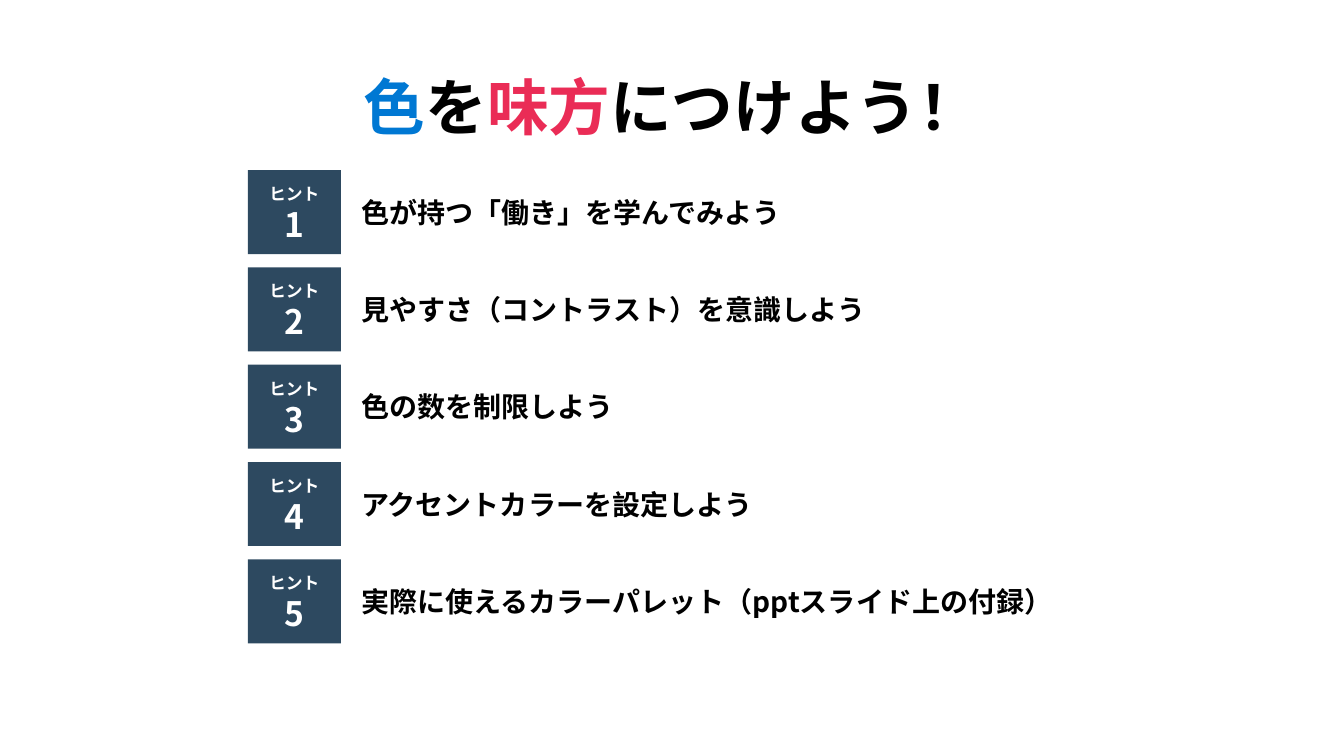
from lxml import etree
from pptx import Presentation
from pptx.dml.color import RGBColor
from pptx.enum.shapes import MSO_SHAPE
from pptx.enum.text import MSO_ANCHOR, MSO_AUTO_SIZE, PP_ALIGN
from pptx.oxml.ns import qn
from pptx.util import Pt

PX = 6350
FONT = "Noto Sans CJK JP"
RECT = MSO_SHAPE.RECTANGLE
MIDDLE = MSO_ANCHOR.MIDDLE
GROW = MSO_AUTO_SIZE.SHAPE_TO_FIT_TEXT
LEFT, CENTER = PP_ALIGN.LEFT, PP_ALIGN.CENTER

BLACK = RGBColor(0x00, 0x00, 0x00)
WHITE = RGBColor(0xFF, 0xFF, 0xFF)
BLUE = RGBColor(0x00, 0x78, 0xD3)
RED = RGBColor(0xEA, 0x2C, 0x56)
NAVY = RGBColor(0x2D, 0x49, 0x60)

WIDTH, HEIGHT = 1920, 1080
BADGE_X, BADGE_W = 354, 133
HINT_W, HINT_H = 1079, 120
HINT_TOP, HINT_PITCH = 243, 139

TITLE = [("色", BLUE), ("を", BLACK), ("味方", RED), ("につけよう！", BLACK)]
HINTS = [
    "色が持つ「働き」を学んでみよう",
    "見やすさ（コントラスト）を意識しよう",
    "色の数を制限しよう",
    "アクセントカラーを設定しよう",
    "実際に使えるカラーパレット（pptスライド上の付録）",
]


def px(*values):
    return [v * PX for v in values]


def add_run(p, text, size, color):
    r = p.add_run()
    r.text = text
    r.font.size = Pt(size)
    r.font.bold = True
    r.font.color.rgb = color
    r.font.name = FONT
    etree.SubElement(r.font._element, qn("a:ea"), typeface=FONT)


def add_title(s, runs):
    tf = s.shapes.add_textbox(*px(0, 92, WIDTH, 121)).text_frame
    tf.word_wrap = True
    tf.auto_size = GROW
    p = tf.paragraphs[0]
    p.alignment = CENTER
    for text, color in runs:
        add_run(p, text, 44, color)


def add_block(shapes, box, fill, insets, align, lines, color):
    sp = shapes.add_shape(RECT, *px(*box))
    sp.shadow.inherit = False
    sp.fill.solid()
    sp.fill.fore_color.rgb = fill
    sp.line.fill.background()
    tf = sp.text_frame
    tf.word_wrap = True
    tf.vertical_anchor = MIDDLE
    tf.margin_left, tf.margin_top, tf.margin_right, tf.margin_bottom = px(*insets)
    for i, (text, size) in enumerate(lines):
        p = tf.add_paragraph() if i else tf.paragraphs[0]
        p.alignment = align
        add_run(p, text, size, color)


def add_hint(s, number, text):
    y = HINT_TOP + (number - 1) * HINT_PITCH
    shapes = s.shapes.add_group_shape().shapes
    add_block(shapes, (BADGE_X + BADGE_W, y, HINT_W, HINT_H), WHITE,
              (29, 7, 14, 7), LEFT, [(text, 20)], BLACK)
    add_block(shapes, (BADGE_X, y, BADGE_W, HINT_H), NAVY,
              (14, 12, 14, 7), CENTER, [("ヒント", 12), (str(number), 24)], WHITE)


def main():
    prs = Presentation()
    prs.slide_width, prs.slide_height = px(WIDTH, HEIGHT)
    s = prs.slides.add_slide(prs.slide_layouts[6])
    add_title(s, TITLE)
    for number, text in enumerate(HINTS, 1):
        add_hint(s, number, text)
    prs.save("out.pptx")


if __name__ == "__main__":
    main()
